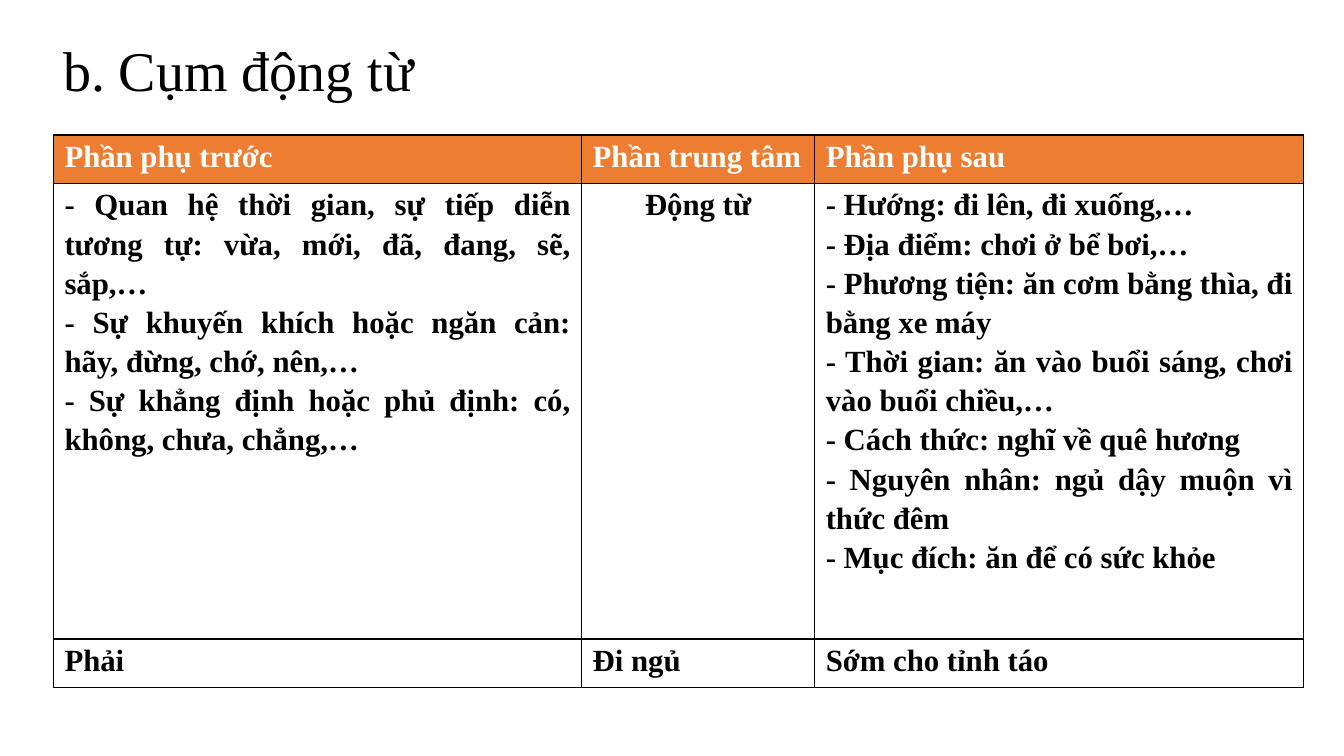
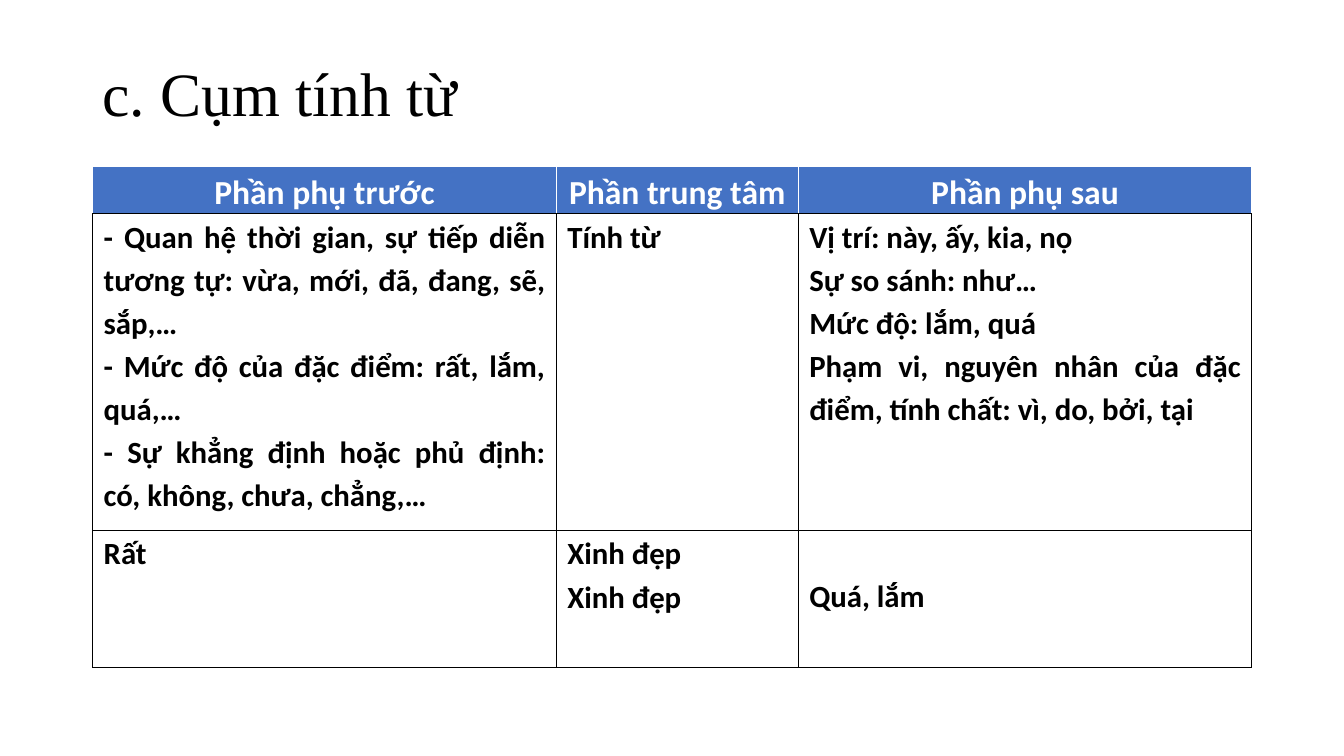
import pptx
import pptx.dml.color
import pptx.enum.text
import pptx.oxml
import pptx.oxml.ns
import pptx.util

Pt = pptx.util.Pt
ALIGN = pptx.enum.text.PP_ALIGN
ANCHOR = pptx.enum.text.MSO_ANCHOR

COLORS = {
    "black": "000000",
    "white": "FFFFFF",
    "orange": "ED7D31",
    "blue": "4472C4",
}
TITLE_FONT = "Times New Roman"
BODY_SIZE = 22
LINE_SPACING = 1.15
SIDE_MARGIN = 7.9
BODY_LINE = 30.7  # height of one body line

HEADINGS = ["Phần phụ trước", "Phần trung tâm", "Phần phụ sau"]
TIME_RELATION = "- Quan hệ thời gian, sự tiếp diễn tương tự: vừa, mới, đã, đang, sẽ, sắp,…"
AFFIRMATION = "- Sự khẳng định hoặc phủ định: có, không, chưa, chẳng,…"

# Each cell is a list of paragraphs; "centered" and "lowered" hold (row, column).
PHRASES = [
    {
        "title": "b. Cụm động từ", "title_size": 40, "title_box": (38, 19.4, 828, 58.3),
        "table_at": (38.2, 96.5), "columns": [377.3, 166.5, 349.2], "rows": [34.6, 325.4, 34.6],
        "font": "Times New Roman", "header_size": 22, "header_fill": "orange",
        "header_align": ALIGN.JUSTIFY, "header_border": "black",
        "centered": (1, 1), "lowered": None,
        "body": [
            [
                [TIME_RELATION, "- Sự khuyến khích hoặc ngăn cản: hãy, đừng, chớ, nên,…", AFFIRMATION],
                ["Động từ"],
                [
                    "- Hướng: đi lên, đi xuống,…",
                    "- Địa điểm: chơi ở bể bơi,…",
                    "- Phương tiện: ăn cơm bằng thìa, đi bằng xe máy",
                    "- Thời gian: ăn vào buổi sáng, chơi vào buổi chiều,…",
                    "- Cách thức: nghĩ về quê hương",
                    "- Nguyên nhân: ngủ dậy muộn vì thức đêm",
                    "- Mục đích: ăn để có sức khỏe",
                ],
            ],
            [["Phải"], ["Đi ngủ"], ["Sớm cho tỉnh táo"]],
        ],
    },
    {
        "title": "c. Cụm tính từ", "title_size": 44, "title_box": (66, 23, 828, 73.4),
        "table_at": (66.2, 118.8), "columns": [331.2, 172.8, 324], "rows": [33.8, 226.1, 98.3],
        "font": "Calibri", "header_size": 24, "header_fill": "blue",
        "header_align": ALIGN.CENTER, "header_border": "white",
        "centered": None, "lowered": (2, 2),
        "body": [
            [
                [TIME_RELATION, "- Mức độ của đặc điểm: rất, lắm, quá,…", AFFIRMATION],
                ["Tính từ"],
                [
                    "Vị trí: này, ấy, kia, nọ",
                    "Sự so sánh: như…",
                    "Mức độ: lắm, quá",
                    "Phạm vi, nguyên nhân của đặc điểm, tính chất: vì, do, bởi, tại",
                ],
            ],
            [["Rất"], ["Xinh đẹp", "Xinh đẹp"], ["Quá, lắm"]],
        ],
    },
]


def write_paragraphs(frame, lines, font, size, color, bold, align, spacing):
    for index, line in enumerate(lines):
        paragraph = frame.paragraphs[0] if index == 0 else frame.add_paragraph()
        paragraph.alignment = align
        paragraph.line_spacing = spacing
        run = paragraph.add_run()
        run.text = line
        run.font.name = font
        run.font.size = Pt(size)
        run.font.bold = bold
        run.font.color.rgb = pptx.dml.color.RGBColor.from_string(COLORS[color])


def style_cell(cell, fill, side_border):
    """Fill the cell and line it; the bottom line is always black."""
    cell.fill.solid()
    cell.fill.fore_color.rgb = pptx.dml.color.RGBColor.from_string(COLORS[fill])
    borders = {"lnL": side_border, "lnR": side_border, "lnT": side_border, "lnB": "black"}
    properties = cell._tc.get_or_add_tcPr()
    for index, (edge, color) in enumerate(borders.items()):
        properties.insert(index, pptx.oxml.parse_xml(
            f'<a:{edge} {pptx.oxml.ns.nsdecls("a")} w="{Pt(1)}"><a:solidFill>'
            f'<a:srgbClr val="{COLORS[color]}"/></a:solidFill></a:{edge}>'))


deck = pptx.Presentation()
deck.slide_width, deck.slide_height = Pt(960), Pt(540)

for phrase in PHRASES:
    slide = deck.slides.add_slide(deck.slide_layouts[6])

    title = slide.shapes.add_textbox(*map(Pt, phrase["title_box"])).text_frame
    title.word_wrap = True
    title.vertical_anchor = ANCHOR.BOTTOM
    write_paragraphs(title, [phrase["title"]], TITLE_FONT, phrase["title_size"],
                     "black", False, ALIGN.LEFT, 0.9)

    rows, columns = phrase["rows"], phrase["columns"]
    left, top = phrase["table_at"]
    table = slide.shapes.add_table(len(rows), len(columns), Pt(left), Pt(top),
                                   Pt(sum(columns)), Pt(sum(rows))).table
    table.horz_banding = False
    for column, width in zip(table.columns, columns):
        column.width = Pt(width)
    for row, height in zip(table.rows, rows):
        row.height = Pt(height)

    contents = [[[heading] for heading in HEADINGS]] + phrase["body"]
    for r, row_contents in enumerate(contents):
        for c, lines in enumerate(row_contents):
            cell = table.cell(r, c)
            cell.margin_left = cell.margin_right = Pt(SIDE_MARGIN)
            cell.margin_top = Pt(BODY_LINE if (r, c) == phrase["lowered"] else 0)
            cell.margin_bottom = Pt(0)
            if r == 0:
                style_cell(cell, phrase["header_fill"], phrase["header_border"])
                size, color, align = phrase["header_size"], "white", phrase["header_align"]
            else:
                style_cell(cell, "white", "black")
                size, color = BODY_SIZE, "black"
                align = ALIGN.CENTER if (r, c) == phrase["centered"] else ALIGN.JUSTIFY
            write_paragraphs(cell.text_frame, lines, phrase["font"], size, color,
                             True, align, LINE_SPACING)

deck.save("out.pptx")
